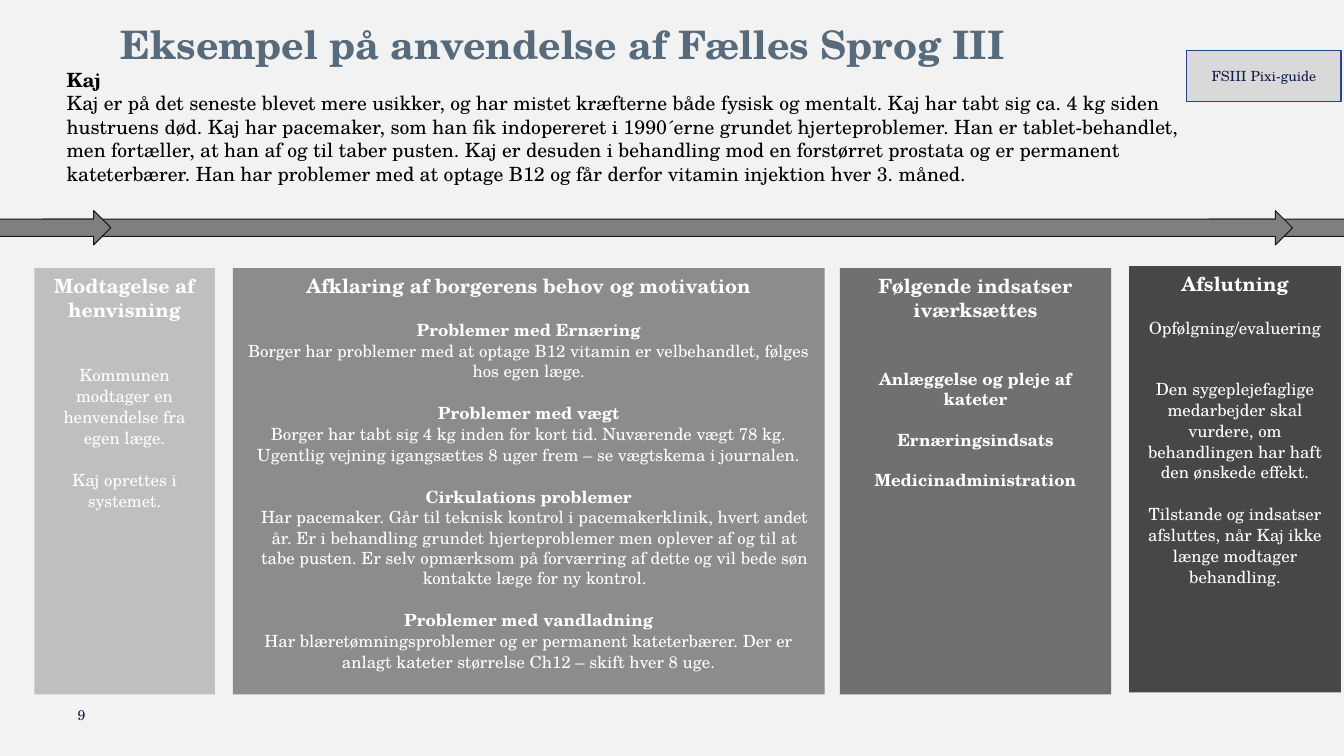
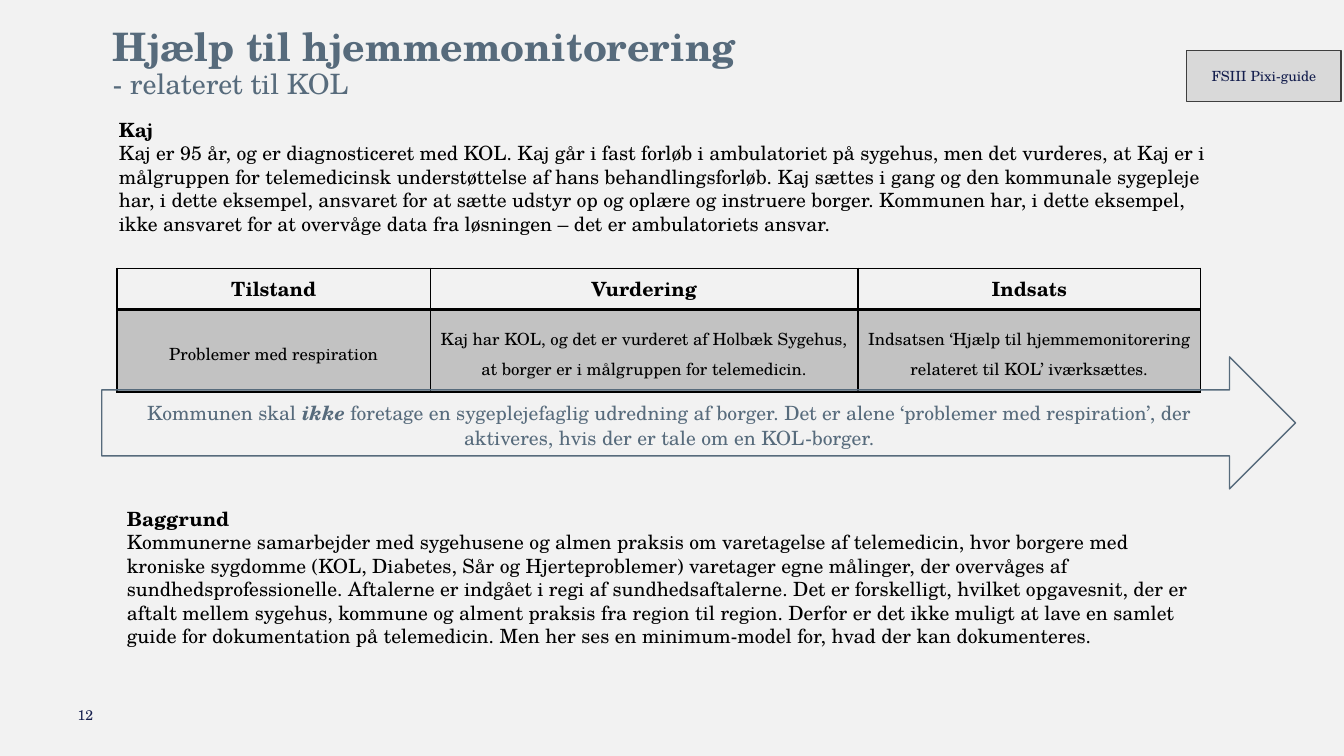
from dataclasses import dataclass

from lxml import etree
from pptx import Presentation
from pptx.dml.color import RGBColor
from pptx.enum.shapes import MSO_SHAPE as Preset
from pptx.enum.text import MSO_ANCHOR as Anchor, PP_ALIGN as Align
from pptx.oxml.ns import qn
from pptx.util import Inches, Pt

FONT = "TeX Gyre Schola"
BACKGROUND, WHITE, BLACK = "F2F2F2", "FFFFFF", "000000"
SLATE, NAVY, TAG_FILL = "576B7C", "141E4D", "D9D9D9"
TABLE_FILL = "C2C2C2"
ARROW_FILL, ARROW_LINE = "7F7F7F", "151919"
LINE_SPACING = 1.04
BLANK_LINE = 15  # points, one 12 pt line


@dataclass
class Para:
    text: str
    size: float = 12
    bold: bool = False
    before: float = 0
    spacing: float = LINE_SPACING
    indent: float = 0
    emphasis: str = ""


def rgb(color):
    return RGBColor.from_string(color)


def write(frame, paras, color, align=Align.LEFT, anchor=Anchor.TOP):
    frame.word_wrap = True
    frame.vertical_anchor = anchor
    for index, para in enumerate(paras):
        paragraph = frame.paragraphs[0] if index == 0 else frame.add_paragraph()
        paragraph.alignment = align
        paragraph.line_spacing = para.spacing
        if para.before:
            paragraph.space_before = Pt(para.before)
        if para.indent:
            properties = paragraph._p.get_or_add_pPr()
            properties.set("marL", str(Inches(para.indent)))
            properties.set("indent", "0")
        if para.emphasis:
            lead, tail = para.text.split(para.emphasis, 1)
            for part in (lead, para.emphasis, tail):
                paragraph.add_run().text = part
        else:
            paragraph.text = para.text
        for run in paragraph.runs:
            font = run.font
            font.name, font.size, font.bold = FONT, Pt(para.size), para.bold
            font.color.rgb = rgb(color)
            if run.text == para.emphasis:
                font.bold = font.italic = True


def border(cell, widths):
    """Draw black cell borders; widths are points for left, right, top, bottom."""
    properties = cell._tc.get_or_add_tcPr()
    for index, (side, width) in enumerate(zip("LRTB", widths)):
        line = etree.Element(qn(f"a:ln{side}"), w=str(Pt(width)))
        fill = etree.SubElement(line, qn("a:solidFill"))
        etree.SubElement(fill, qn("a:srgbClr"), val=BLACK)
        properties.insert(index, line)


class Deck:
    def __init__(self):
        self.presentation = Presentation()
        self.presentation.slide_width = Inches(13.33)
        self.presentation.slide_height = Inches(7.5)
        self.slide = None

    def new_slide(self, number, title, title_box):
        layout = self.presentation.slide_layouts[6]
        self.slide = self.presentation.slides.add_slide(layout)
        fill = self.slide.background.fill
        fill.solid()
        fill.fore_color.rgb = rgb(BACKGROUND)
        self.text(title_box, title, SLATE, anchor=Anchor.MIDDLE)
        self.text((0.77, 6.89, 3, 0.4), [Para(str(number), 10, spacing=1)],
                  NAVY, anchor=Anchor.MIDDLE)

    def text(self, box, paras, color=BLACK, align=Align.LEFT,
             anchor=Anchor.TOP, inset=(0, 0)):
        frame = self.slide.shapes.add_textbox(*map(Inches, box)).text_frame
        frame.margin_left = frame.margin_right = Inches(inset[0])
        frame.margin_top = frame.margin_bottom = Inches(inset[1])
        write(frame, paras, color, align, anchor)

    def story(self, box, heading, body, **style):
        """A bold heading directly followed by its running text."""
        self.text(box, [Para(heading, 14, True, spacing=1),
                        Para(body, 14, spacing=1)], **style)

    def shape(self, preset, box, fill=None, line=None, width=1):
        shape = self.slide.shapes.add_shape(preset, *map(Inches, box))
        shape.shadow.inherit = False
        if fill:
            shape.fill.solid()
            shape.fill.fore_color.rgb = rgb(fill)
        else:
            shape.fill.background()
        if line:
            shape.line.color.rgb = rgb(line)
            shape.line.width = Pt(width)
        else:
            shape.line.fill.background()
        return shape

    def panel(self, box, fill, paras):
        panel = self.shape(Preset.RECTANGLE, box, fill)
        write(panel.text_frame, paras, WHITE, Align.CENTER)

    def guide_tag(self, line):
        tag = self.shape(Preset.RECTANGLE, (11.77, 0.5, 1.53, 0.51), TAG_FILL, line)
        write(tag.text_frame, [Para("FSIII Pixi-guide", 10, spacing=1)], NAVY,
              Align.CENTER, Anchor.MIDDLE)

    def table(self, left, top, widths, heights, rows):
        frame = self.slide.shapes.add_table(
            len(rows), len(widths), Inches(left), Inches(top),
            Inches(sum(widths)), Inches(sum(heights)))
        table = frame.table
        table.first_row = table.horz_banding = False
        for column, width in zip(table.columns, widths):
            column.width = Inches(width)
        for index, (height, texts) in enumerate(zip(heights, rows)):
            header = index == 0
            table.rows[index].height = Inches(height)
            for cell, text in zip(table.rows[index].cells, texts):
                cell.margin_left = cell.margin_right = Inches(0.08)
                cell.margin_top = cell.margin_bottom = Inches(0.04)
                para = Para(text, 14 if header else 12, header,
                            spacing=1 if header else 1.24)
                write(cell.text_frame, [para], BLACK, Align.CENTER)
                cell.vertical_anchor = Anchor.MIDDLE
                if header:
                    cell.fill.background()
                else:
                    cell.fill.solid()
                    cell.fill.fore_color.rgb = rgb(TABLE_FILL)
                border(cell, (1, 1, 1, 2) if header else (1, 1, 2, 1))


def build_example(deck):
    deck.new_slide(
        9, [Para("Eksempel på anvendelse af Fælles Sprog III", 28, True, spacing=0.9)],
        (1.2, 0.15, 10.93, 0.62))
    deck.story(
        (0.66, 0.67, 11.12, 1.18), "Kaj",
        "Kaj er på det seneste blevet mere usikker, og har mistet kræfterne både fysisk "
        "og mentalt. Kaj har tabt sig ca. 4 kg siden hustruens død. Kaj har pacemaker, "
        "som han fik indopereret i 1990´erne grundet hjerteproblemer. Han er "
        "tablet-behandlet, men fortæller, at han af og til taber pusten. Kaj er desuden "
        "i behandling mod en forstørret prostata og er permanent kateterbærer. Han har "
        "problemer med at optage B12 og får derfor vitamin injektion hver 3. måned.")
    deck.guide_tag("2A438F")

    deck.panel((0.34, 2.66, 1.79, 4.23), "BFBFBF", [
        Para("Modtagelse af henvisning", 14, True),
        Para("Kommunen modtager en henvendelse fra egen læge.", before=2 * BLANK_LINE),
        Para("Kaj oprettes i systemet.", before=BLANK_LINE)])

    problems = [
        ("Problemer med Ernæring",
         "Borger har problemer med at optage B12 vitamin er velbehandlet, følges hos "
         "egen læge.", {}),
        ("Problemer med vægt",
         "Borger har tabt sig 4 kg inden for kort tid. Nuværende vægt 78 kg. Ugentlig "
         "vejning igangsættes 8 uger frem – se vægtskema i journalen.", {}),
        ("Cirkulations problemer",
         "Har pacemaker. Går til teknisk kontrol i pacemakerklinik, hvert andet år. Er "
         "i behandling grundet hjerteproblemer men oplever af og til at tabe pusten. Er "
         "selv opmærksom på forværring af dette og vil bede søn kontakte læge for ny "
         "kontrol.", {"spacing": 1, "indent": 0.12}),
        ("Problemer med vandladning",
         "Har blæretømningsproblemer og er permanent kateterbærer. Der er anlagt "
         "kateter størrelse Ch12 – skift hver 8 uge.", {}),
    ]
    needs = [Para("Afklaring af borgerens behov og motivation", 14, True)]
    for problem, finding, layout in problems:
        needs += [Para(problem, bold=True, before=BLANK_LINE), Para(finding, **layout)]
    deck.panel((2.31, 2.66, 5.87, 4.23), "8C8C8C", needs)

    deck.panel((8.33, 2.66, 2.69, 4.23), "707070", [
        Para("Følgende indsatser iværksættes", 14, True),
        Para("Anlæggelse og pleje af kateter", bold=True, before=33.6, spacing=1),
        Para("Ernæringsindsats", bold=True, before=14.4, spacing=1),
        Para("Medicinadministration", bold=True, before=14.4, spacing=1)])

    deck.panel((11.2, 2.64, 2.1, 4.23), "474747", [
        Para("Afslutning", 14, True),
        Para("Opfølgning/evaluering", before=BLANK_LINE),
        Para("Den sygeplejefaglige medarbejder skal vurdere, om behandlingen har haft "
             "den ønskede effekt.", before=28.7),
        Para("Tilstande og indsatser afsluttes, når Kaj ikke længe modtager behandling.",
             before=BLANK_LINE)])

    for left, width in ((11.99, 2.41), (0.42, 12.4), (-0.54, 1.64)):
        deck.shape(Preset.RIGHT_ARROW, (left, 2.09, width, 0.34),
                   ARROW_FILL, ARROW_LINE, 0.75)


def build_monitoring(deck):
    deck.new_slide(
        12, [Para("Hjælp til hjemmemonitorering", 28, True, spacing=0.9),
             Para("- relateret til KOL", 20, spacing=0.9)],
        (1.12, 0.29, 12.21, 0.69))
    framed = {"anchor": Anchor.MIDDLE, "inset": (0.1, 0.05)}
    deck.story(
        (1.16, 4.94, 10.75, 1.57), "Baggrund",
        "Kommunerne samarbejder med sygehusene og almen praksis om varetagelse af "
        "telemedicin, hvor borgere med kroniske sygdomme (KOL, Diabetes, Sår og "
        "Hjerteproblemer) varetager egne målinger, der overvåges af "
        "sundhedsprofessionelle. Aftalerne er indgået i regi af sundhedsaftalerne. Det "
        "er forskelligt, hvilket opgavesnit, der er aftalt mellem sygehus, kommune og "
        "alment praksis fra region til region. Derfor er det ikke muligt at lave en "
        "samlet guide for dokumentation på telemedicin. Men her ses en minimum-model "
        "for, hvad der kan dokumenteres.", **framed)
    deck.story(
        (1.08, 1.18, 11.05, 1.14), "Kaj",
        "Kaj er 95 år, og er diagnosticeret med KOL. Kaj går i fast forløb i "
        "ambulatoriet på sygehus, men det vurderes, at Kaj er i målgruppen for "
        "telemedicinsk understøttelse af hans behandlingsforløb. Kaj sættes i gang og "
        "den kommunale sygepleje har, i dette eksempel, ansvaret for at sætte udstyr op "
        "og oplære og instruere borger. Kommunen har, i dette eksempel, ikke ansvaret "
        "for at overvåge data fra løsningen – det er ambulatoriets ansvar.", **framed)
    deck.table(1.16, 2.66, (3.11, 4.24, 3.4), (0.41, 0.82), [
        ("Tilstand", "Vurdering", "Indsats"),
        ("Problemer med respiration",
         "Kaj har KOL, og det er vurderet af Holbæk Sygehus, at borger er i målgruppen "
         "for telemedicin.",
         "Indsatsen ‘Hjælp til hjemmemonitorering relateret til KOL’ iværksættes.")])
    deck.shape(Preset.RIGHT_ARROW, (1.01, 3.54, 11.84, 1.31), line=SLATE)
    deck.text((1.16, 3.97, 10.96, 0.48), [
        Para("Kommunen skal ikke foretage en sygeplejefaglig udredning af borger. Det er "
             "alene ‘problemer med respiration’, der aktiveres, hvis der er tale om en "
             "KOL-borger.", 14, emphasis="ikke")], SLATE, Align.CENTER)
    deck.guide_tag("3F3F3F")


def main():
    deck = Deck()
    build_example(deck)
    build_monitoring(deck)
    deck.presentation.save("out.pptx")


if __name__ == "__main__":
    main()
